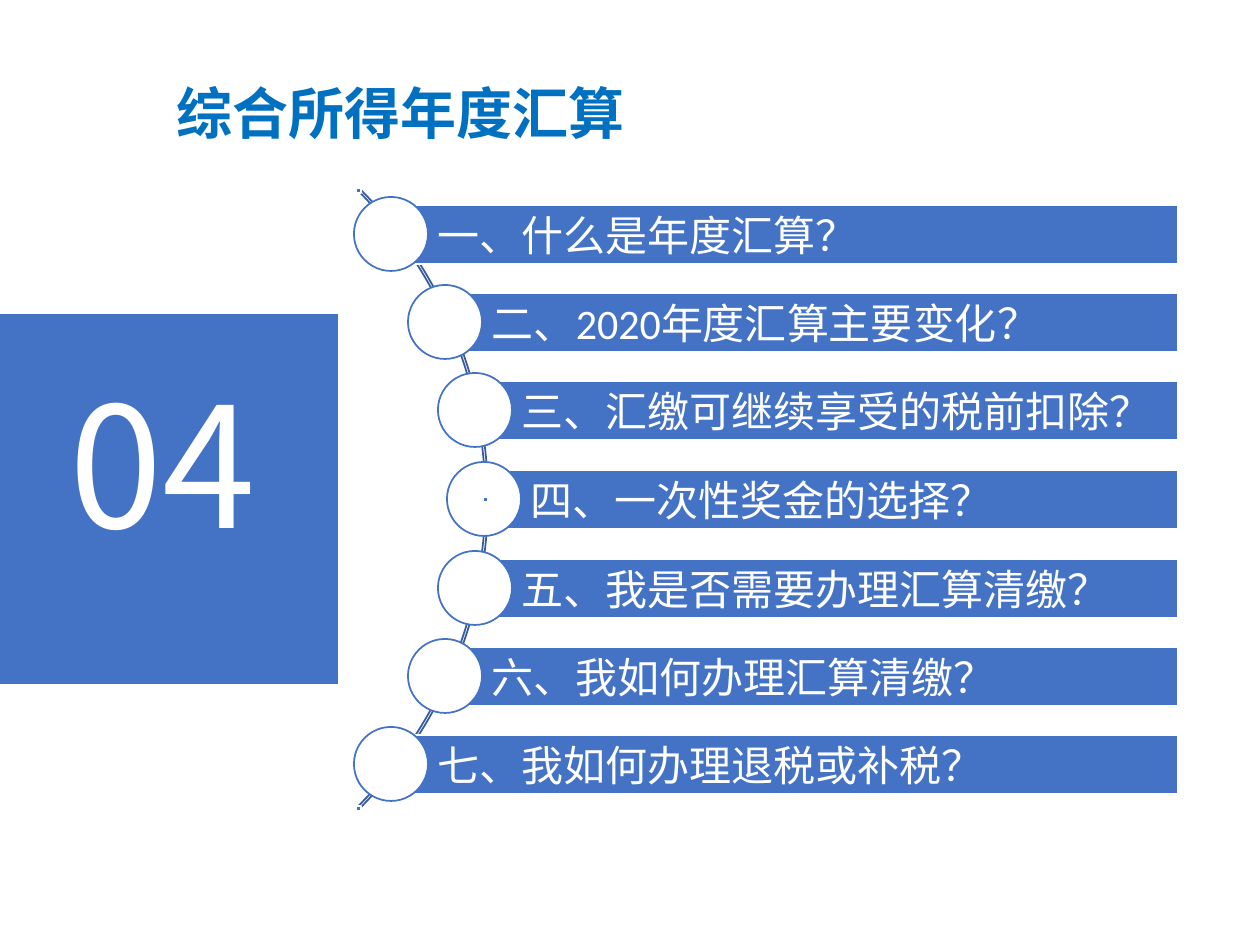
from dataclasses import dataclass
from math import sqrt

from lxml import etree
from pptx import Presentation, util as u
from pptx.dml.color import RGBColor
from pptx.enum import shapes, text
from pptx.oxml.ns import qn

PX = 914400 // 126  # EMU in one px


@dataclass(frozen=True)
class Theme:
    blue: str = "4472C4"
    dark_blue: str = "365B9D"
    title_blue: str = "0070C0"
    white: str = "FFFFFF"
    cjk_font: str = "Noto Sans CJK SC"
    latin_font: str = "Calibri"
    title_size: int = 32
    topic_size: int = 24
    number_size: int = 96


@dataclass(frozen=True)
class Box:
    left: int
    top: int
    width: int
    height: int

    def emu(self) -> list[int]:
        return [v * PX for v in (self.left, self.top, self.width, self.height)]


THEME = Theme()
TOPICS = [
    "一、什么是年度汇算？",
    "二、2020年度汇算主要变化？",
    "三、汇缴可继续享受的税前扣除？",
    "四、一次性奖金的选择？",
    "五、我是否需要办理汇算清缴？",
    "六、我如何办理汇算清缴？",
    "七、我如何办理退税或补税？",
]

# Topic centres lie on a circle; the drawn arc is slightly larger
MIDDLE_Y, TOPIC_SPAN = 499, 531
CURVE_X, CURVE_RADIUS = 58, 426
BAR_RIGHT, BAR_HEIGHT = 1178, 59
CIRCLE_SIZE, DOT_SIZE = 74, 5


def add_figure(slide, kind, box: Box, fill: str | None, line: str | None = None):
    figure = slide.shapes.add_shape(kind, *box.emu())
    figure.shadow.inherit = False
    if fill:
        figure.fill.solid()
        figure.fill.fore_color.rgb = RGBColor.from_string(fill)
    else:
        figure.fill.background()
    if line:
        figure.line.color.rgb = RGBColor.from_string(line)
        figure.line.width = u.Pt(1)
    else:
        figure.line.fill.background()
    return figure


def write(frame, words: str, size: int, color: str, font: str, bold: bool = False):
    frame.text = words
    paragraph = frame.paragraphs[0]
    paragraph.alignment = text.PP_ALIGN.LEFT
    paragraph.font.size = u.Pt(size)
    paragraph.font.bold = bold
    paragraph.font.color.rgb = RGBColor.from_string(color)
    paragraph.font.name = font
    # East Asian typeface follows the Latin one
    latin = paragraph._p.pPr.find(qn("a:defRPr")).find(qn("a:latin"))
    east_asian = etree.Element(qn("a:ea"), typeface=THEME.cjk_font)
    latin.addnext(east_asian)
    return paragraph


def add_circle(slide, x: int, y: int) -> None:
    box = Box(x - CIRCLE_SIZE // 2, y - CIRCLE_SIZE // 2, CIRCLE_SIZE, CIRCLE_SIZE)
    add_figure(slide, shapes.MSO_SHAPE.OVAL, box, THEME.white, THEME.blue)


def add_topic(slide, index: int, words: str) -> None:
    offset = TOPIC_SPAN * (index / (len(TOPICS) - 1) - 0.5)
    x = round(CURVE_X + sqrt(CURVE_RADIUS**2 - offset**2))
    y = round(MIDDLE_Y + offset)
    box = Box(x, y - BAR_HEIGHT // 2, BAR_RIGHT - x, BAR_HEIGHT)
    bar = add_figure(slide, shapes.MSO_SHAPE.RECTANGLE, box, THEME.blue, THEME.white)
    frame = bar.text_frame
    frame.margin_left = 47 * PX
    frame.margin_top = frame.margin_right = frame.margin_bottom = 9 * PX
    frame.vertical_anchor = text.MSO_ANCHOR.MIDDLE
    write(frame, words, THEME.topic_size, THEME.white, THEME.latin_font)
    add_circle(slide, x, y)


def add_title(slide) -> None:
    title = slide.shapes.title
    title.left, title.top, title.width, title.height = Box(164, 57, 988, 77).emu()
    frame = title.text_frame
    frame.auto_size = text.MSO_AUTO_SIZE.NONE
    frame.vertical_anchor = text.MSO_ANCHOR.MIDDLE
    heading = write(frame, "综合所得年度汇算", THEME.title_size,
                    THEME.title_blue, THEME.cjk_font, bold=True)
    heading.line_spacing = 1.5


def add_section_number(slide) -> None:
    add_figure(slide, shapes.MSO_SHAPE.RECTANGLE, Box(0, 314, 338, 370), THEME.blue)
    number = slide.shapes.add_textbox(*Box(57, 354, 224, 217).emu())
    number.text_frame.word_wrap = False
    number.text_frame.auto_size = text.MSO_AUTO_SIZE.SHAPE_TO_FIT_TEXT
    write(number.text_frame, "04", THEME.number_size, THEME.white, THEME.cjk_font)


def main() -> None:
    deck = Presentation()
    deck.slide_width, deck.slide_height = u.Inches(10), u.Inches(7.5)
    slide = deck.slides.add_slide(deck.slide_layouts[5])

    add_title(slide)
    add_section_number(slide)

    # Arc behind the topics
    arc = add_figure(slide, shapes.MSO_SHAPE.BLOCK_ARC, Box(-389, 60, 877, 877),
                     None, THEME.dark_blue)
    for position, value in enumerate((189, 27, 0.003)):
        arc.adjustments[position] = value

    for index, words in enumerate(TOPICS):
        add_topic(slide, index, words)

    # Dots at the ends and the middle of the arc
    for x, y in ((358, 190), (485, MIDDLE_Y), (358, 808)):
        box = Box(x - DOT_SIZE // 2, y - DOT_SIZE // 2, DOT_SIZE, DOT_SIZE)
        add_figure(slide, shapes.MSO_SHAPE.RECTANGLE, box, THEME.blue, THEME.white)

    deck.save("out.pptx")


if __name__ == "__main__":
    main()
